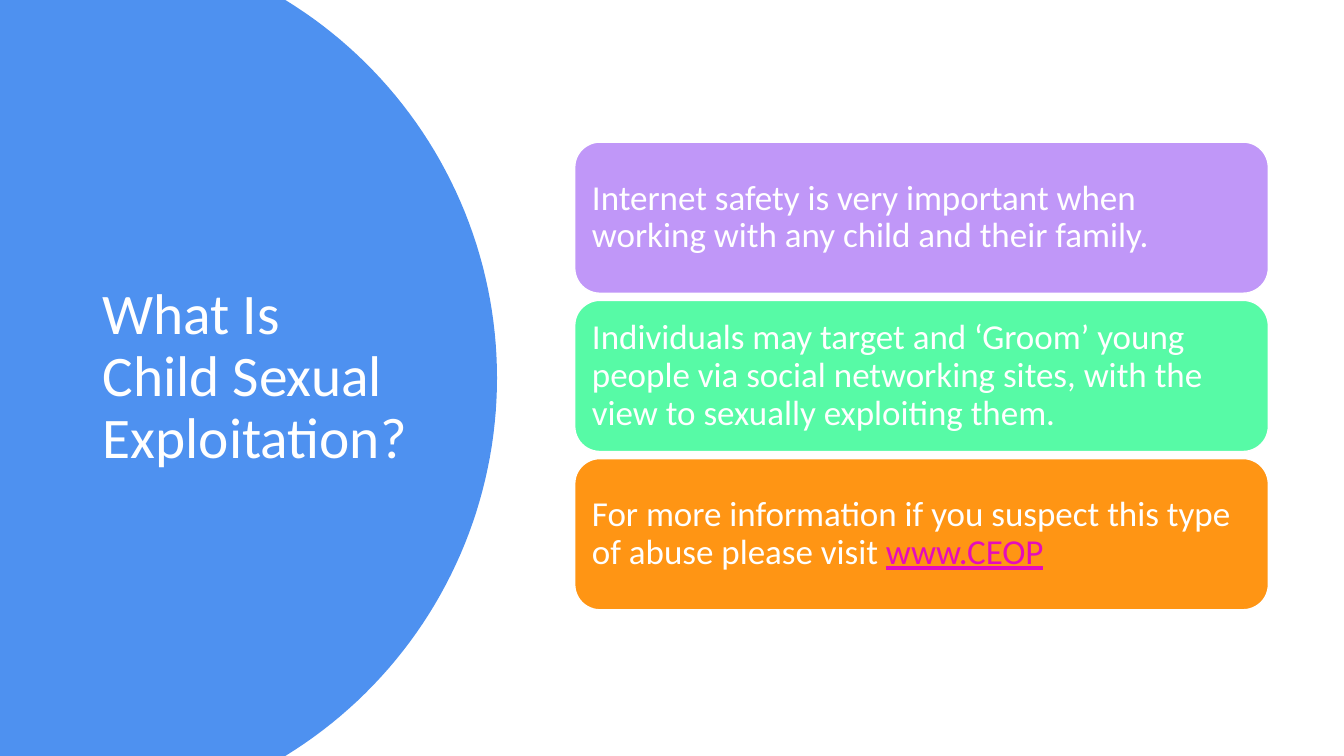
from math import asin, cos, sin
from pptx import Presentation
from pptx.dml.color import RGBColor
from pptx.enum.shapes import MSO_SHAPE
from pptx.enum.text import MSO_ANCHOR, PP_ALIGN
from pptx.util import Inches, Pt

WHITE = RGBColor(0xFF, 0xFF, 0xFF)
BLUE = RGBColor(0x4E, 0x91, 0xF0)
PURPLE = RGBColor(0xC0, 0x97, 0xF8)
GREEN = RGBColor(0x57, 0xFA, 0xA6)
ORANGE = RGBColor(0xFF, 0x95, 0x14)
MAGENTA = RGBColor(0xE5, 0x0C, 0xBC)

TITLE = "What Is Child Sexual Exploitation?"
CARDS = [
    (PURPLE, "Internet safety is very important when working with any child and their family.", ""),
    (GREEN, "Individuals may target and ‘Groom’ young people via social networking sites, "
            "with the view to sexually exploiting them.", ""),
    (ORANGE, "For more information if you suspect this type of abuse please visit ", "www.CEOP"),
]

SLIDE_W, SLIDE_H = 13.33, 7.5
ARC_EDGE, ARC_RIGHT, ARC_STEPS = 2.83, 4.93, 80
CARD_X, CARD_Y, CARD_W, CARD_H, CARD_PITCH = 5.7, 1.41, 6.88, 1.5, 1.57


def write(s, text, size, inset_y=0.1, link=""):
    tf = s.text_frame
    tf.word_wrap = True
    tf.vertical_anchor = MSO_ANCHOR.MIDDLE
    tf.margin_left = tf.margin_right = Inches(0.1)
    tf.margin_top = tf.margin_bottom = Inches(inset_y)
    p = tf.paragraphs[0]
    p.alignment = PP_ALIGN.LEFT
    p.line_spacing = 0.9
    for part, color in ((text, WHITE), (link, MAGENTA)):
        if part:
            r = p.add_run()
            r.text = part
            r.font.name = "Calibri"
            r.font.size = Pt(size)
            r.font.color.rgb = color
            if part == link:
                r.font.underline = True


prs = Presentation()
prs.slide_width, prs.slide_height = Inches(SLIDE_W), Inches(SLIDE_H)
slide = prs.slides.add_slide(prs.slide_layouts[6])

half = SLIDE_H / 2
depth = ARC_RIGHT - ARC_EDGE
radius = (depth ** 2 + half ** 2) / (2 * depth)
center_x = ARC_RIGHT - radius
sweep = asin(half / radius)
angles = [sweep * (2 * i / ARC_STEPS - 1) for i in range(ARC_STEPS + 1)]
arc = [(Inches(center_x + radius * cos(a)), Inches(half + radius * sin(a))) for a in angles]
builder = slide.shapes.build_freeform(0, 0)
builder.add_line_segments(arc + [(0, Inches(SLIDE_H))], close=True)
panel = builder.convert_to_shape()
panel.shadow.inherit = False
panel.fill.solid()
panel.fill.fore_color.rgb = BLUE
panel.line.fill.background()

title = slide.shapes.add_textbox(Inches(0.92), Inches(0.7), Inches(3.23), Inches(6.09))
write(title, TITLE, 41, inset_y=0.05)

for i, (color, text, link) in enumerate(CARDS):
    card = slide.shapes.add_shape(MSO_SHAPE.ROUNDED_RECTANGLE, Inches(CARD_X),
                                  Inches(CARD_Y + i * CARD_PITCH), Inches(CARD_W), Inches(CARD_H))
    card.shadow.inherit = False
    card.fill.solid()
    card.fill.fore_color.rgb = color
    card.line.color.rgb = WHITE
    card.line.width = Pt(1)
    write(card, text, 25, link=link)

prs.save("out.pptx")
